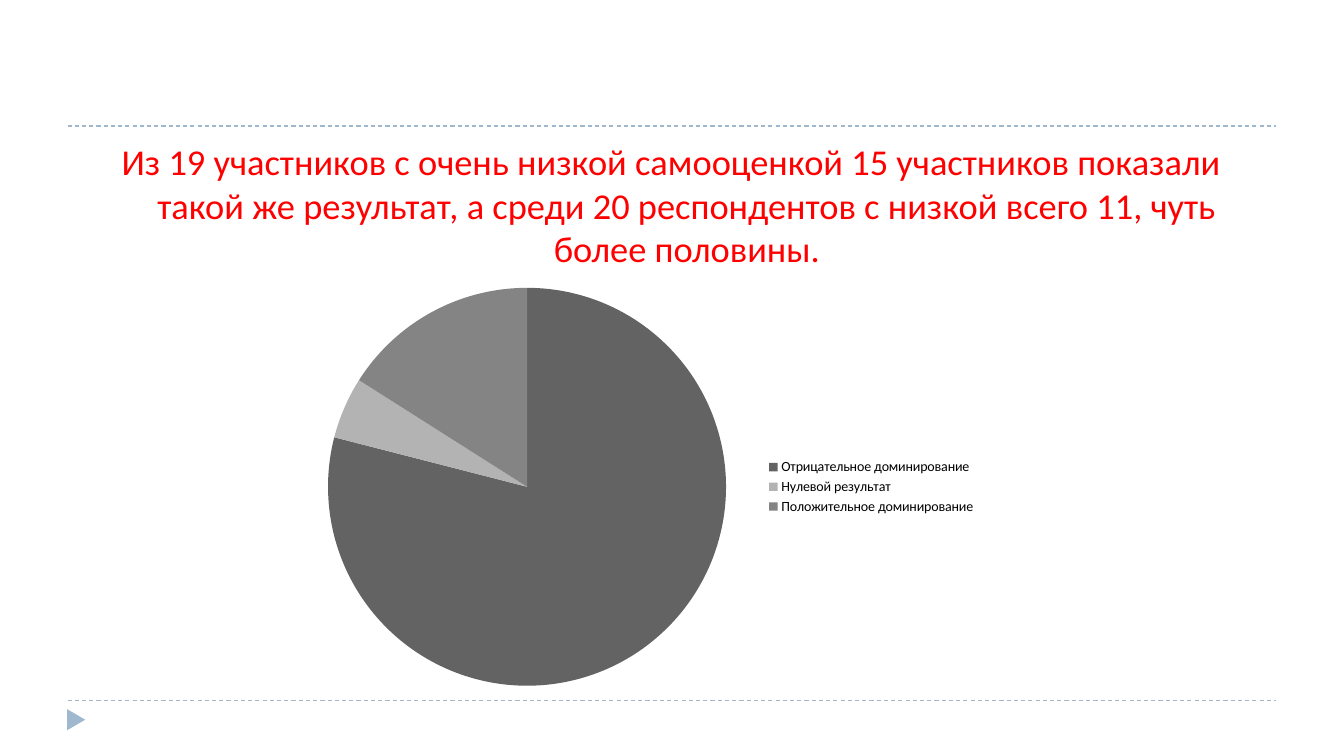
from lxml import etree
from pptx import Presentation
from pptx import util as u
from pptx.chart.data import CategoryChartData
from pptx.dml.color import RGBColor
from pptx.enum import chart as charts, dml, shapes, text
from pptx.oxml import parse_xml
from pptx.oxml.ns import nsdecls, qn

FINDING = ("Из 19 участников с очень низкой самооценкой 15 участников показали "
           "такой же результат, а среди 20 респондентов с низкой всего 11, "
           "чуть более половины.")
DOMINANCE = {
    "Отрицательное доминирование": 79,
    "Нулевой результат": 5,
    "Положительное доминирование": 16,
}
THEME = {
    "font": "Calibri",
    "finding_size": 26,
    "legend_size": 10,
    "rule_width": 0.75,
    "finding": "FF0000",
    "legend": "000000",
    "accent": "9FB8CD",
    "slices": ["636363", "B3B3B3", "848484"],
}
WIDTH, HEIGHT = 13.33, 7.5
MARGIN = 0.67
CONTENT_WIDTH = WIDTH - 2 * MARGIN
RULES = (1.25, 6.95)
FINDING_BOX = (MARGIN, 1.33, CONTENT_WIDTH, 5.4)
PIE_BOX = (2.83, 2.73, 6.95, 4.2)
PIE_SHARES = {"x": 0.06, "y": 0.03, "w": 0.57, "h": 0.94}
MARKER_BOX = (0.65, 7.05, 0.21, 0.18)


def inches(box):
    return [u.Inches(length) for length in box]


def color(name):
    return RGBColor.from_string(THEME[name])


def apply(target, formats):
    for attribute, value in formats.items():
        setattr(target, attribute, value)


def add_rule(slide, y):
    rule = slide.shapes.add_connector(
        shapes.MSO_CONNECTOR.STRAIGHT, *inches((MARGIN, y, WIDTH - MARGIN, y)))
    rule.line.color.rgb = color("accent")
    apply(rule.line, {"width": u.Pt(THEME["rule_width"]),
                      "dash_style": dml.MSO_LINE.DASH})
    etree.SubElement(rule._element.spPr, qn("a:effectLst"))


def add_marker(slide):
    marker = slide.shapes.add_shape(
        shapes.MSO_SHAPE.ISOSCELES_TRIANGLE, *inches(MARKER_BOX))
    marker.rotation = 90
    marker.shadow.inherit = False
    marker.fill.solid()
    marker.fill.fore_color.rgb = color("accent")
    marker.line.fill.background()


def write_finding(body):
    apply(body, dict(zip(("left", "top", "width", "height"), inches(FINDING_BOX))))
    apply(body.text_frame, {"word_wrap": True,
                            "auto_size": text.MSO_AUTO_SIZE.NONE,
                            "vertical_anchor": text.MSO_ANCHOR.TOP})
    paragraph = body.text_frame.paragraphs[0]
    properties = paragraph._p.get_or_add_pPr()
    properties.set("marL", str(u.Inches(0.3)))
    properties.set("indent", str(u.Inches(-0.3)))
    etree.SubElement(properties, qn("a:buNone"))
    apply(paragraph, {"alignment": text.PP_ALIGN.CENTER, "space_before": u.Pt(0)})
    run = paragraph.add_run()
    run.text = FINDING
    apply(run.font, {"name": THEME["font"], "size": u.Pt(THEME["finding_size"])})
    run.font.color.rgb = color("finding")


def add_pie(slide):
    data = CategoryChartData()
    data.categories = list(DOMINANCE)
    data.add_series("Series 1", list(DOMINANCE.values()))
    pie = slide.shapes.add_chart(
        charts.XL_CHART_TYPE.PIE, *inches(PIE_BOX), data).chart
    apply(pie, {"has_title": False, "has_legend": True})
    apply(pie.legend, {"position": charts.XL_LEGEND_POSITION.RIGHT,
                       "include_in_layout": False})
    apply(pie.font, {"name": THEME["font"], "size": u.Pt(THEME["legend_size"])})
    pie.font.color.rgb = color("legend")
    plot = pie.plots[0]
    plot.vary_by_categories = True
    for index, shade in enumerate(THEME["slices"]):
        slice_format = plot.series[0].points[index].format
        slice_format.fill.solid()
        slice_format.fill.fore_color.rgb = RGBColor.from_string(shade)
        slice_format.line.fill.background()
    place_plot(pie._chartSpace.chart.plotArea)


def place_plot(area):
    for automatic in area.findall(qn("c:layout")):
        area.remove(automatic)
    shares = "".join(f'<c:{side} val="{share}"/>' for side, share in PIE_SHARES.items())
    area.insert(0, parse_xml(
        f'<c:layout {nsdecls("c")}><c:manualLayout><c:layoutTarget val="inner"/>'
        f'<c:xMode val="edge"/><c:yMode val="edge"/>{shares}'
        '</c:manualLayout></c:layout>'))


def main():
    deck = Presentation()
    apply(deck, {"slide_width": u.Inches(WIDTH), "slide_height": u.Inches(HEIGHT)})
    slide = deck.slides.add_slide(deck.slide_layouts[1])
    title = slide.shapes.title._element
    title.getparent().remove(title)
    for y in RULES:
        add_rule(slide, y)
    add_marker(slide)
    write_finding(slide.placeholders[1])
    add_pie(slide)
    deck.save("out.pptx")


if __name__ == "__main__":
    main()
